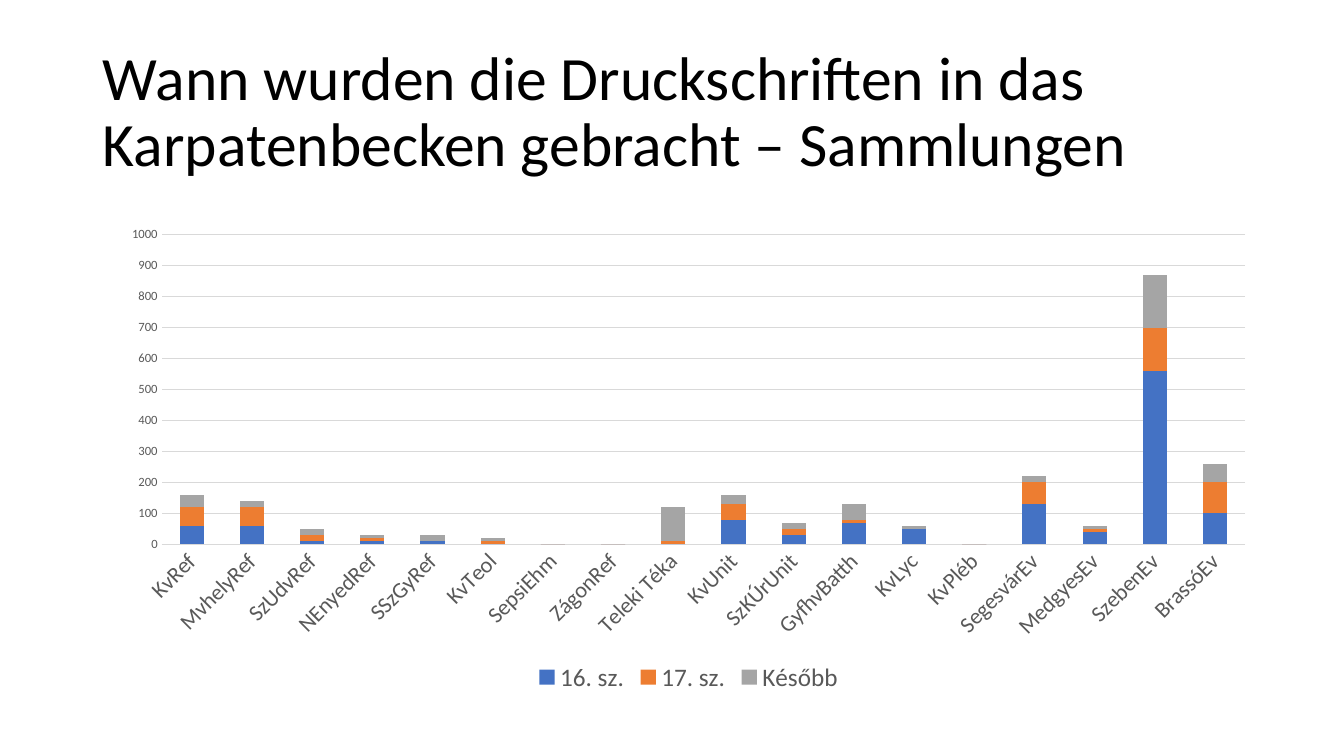
"""Build a slide with a stacked column chart of prints by collection."""
from pptx import Presentation
from pptx.chart.data import CategoryChartData
from pptx.dml.color import RGBColor
from pptx.enum.chart import XL_CHART_TYPE, XL_LEGEND_POSITION, XL_TICK_MARK
from pptx.enum.text import MSO_ANCHOR, MSO_AUTO_SIZE, PP_ALIGN
from pptx.util import Inches, Pt

STACKED = XL_CHART_TYPE.COLUMN_STACKED
BOTTOM = XL_LEGEND_POSITION.BOTTOM
NO_TICK = XL_TICK_MARK.NONE
MIDDLE = MSO_ANCHOR.MIDDLE
NO_AUTOFIT = MSO_AUTO_SIZE.NONE
LEFT = PP_ALIGN.LEFT

FONT = "Calibri"
BLACK = RGBColor(0x00, 0x00, 0x00)
GREY_TEXT = RGBColor(0x59, 0x59, 0x59)
GREY_LINE = RGBColor(0xD9, 0xD9, 0xD9)
BLUE = RGBColor(0x44, 0x72, 0xC4)
ORANGE = RGBColor(0xED, 0x7D, 0x31)
GREY = RGBColor(0xA5, 0xA5, 0xA5)

TITLE = "Wann wurden die Druckschriften in das Karpatenbecken gebracht – Sammlungen"
COLLECTIONS = [
    "KvRef", "MvhelyRef", "SzUdvRef", "NEnyedRef", "SSzGyRef", "KvTeol",
    "SepsiEhm", "ZágonRef", "Teleki Téka", "KvUnit", "SzKÚrUnit", "GyfhvBatth",
    "KvLyc", "KvPléb", "SegesvárEv", "MedgyesEv", "SzebenEv", "BrassóEv",
]
PERIODS = [
    ("16. sz.", BLUE,
     [60, 60, 10, 10, 10, 0, 0, 0, 0, 80, 30, 70, 50, 0, 130, 40, 560, 100]),
    ("17. sz.", ORANGE,
     [60, 60, 20, 10, 0, 10, 0, 0, 10, 50, 20, 10, 0, 0, 70, 10, 140, 100]),
    ("Később", GREY,
     [40, 20, 20, 10, 20, 10, 0, 0, 110, 30, 20, 50, 10, 0, 20, 10, 170, 60]),
]


def style_font(font, size, color):
    """Set typeface, size and colour of a font."""
    font.name = FONT
    font.size = Pt(size)
    font.bold = False
    font.color.rgb = color


def style_line(line):
    """Give a line the thin light grey look."""
    line.color.rgb = GREY_LINE
    line.width = Pt(0.75)


def fill_title(page):
    """Place and format the title."""
    title = page.shapes.title
    title.left, title.top = Inches(0.92), Inches(0.4)
    title.width, title.height = Inches(11.5), Inches(1.45)
    frame = title.text_frame
    frame.text = TITLE
    frame.word_wrap = True
    frame.auto_size = NO_AUTOFIT
    frame.vertical_anchor = MIDDLE
    para = frame.paragraphs[0]
    para.alignment = LEFT
    para.line_spacing = 0.9
    style_font(para.runs[0].font, 44, BLACK)


def style_axes(chart):
    """Format the collection axis and the count axis."""
    collections, counts = chart.category_axis, chart.value_axis
    for axis, size in ((collections, 16), (counts, 9)):
        axis.major_tick_mark = NO_TICK
        axis.minor_tick_mark = NO_TICK
        style_font(axis.tick_labels.font, size, GREY_TEXT)
    style_line(collections.format.line)
    collections._element.txPr.bodyPr.set("rot", "-2700000")
    counts.minimum_scale, counts.maximum_scale = 0, 1000
    counts.major_unit = 100
    counts.format.line.fill.background()
    counts.has_major_gridlines = True
    style_line(counts.major_gridlines.format.line)


def add_period_chart(page):
    """Add the stacked columns of periods by collection."""
    data = CategoryChartData()
    data.categories = COLLECTIONS
    for name, _, values in PERIODS:
        data.add_series(name, values)
    chart = page.shapes.add_chart(
        STACKED, Inches(1.08), Inches(2.16), Inches(11.5), Inches(4.76), data
    ).chart
    style_font(chart.font, 10, BLACK)
    chart.has_title = False
    style_axes(chart)
    chart.has_legend = True
    chart.legend.position = BOTTOM
    chart.legend.include_in_layout = False
    style_font(chart.legend.font, 18, GREY_TEXT)
    plot = chart.plots[0]
    plot.gap_width, plot.overlap = 150, 100
    plot.vary_by_categories = False
    for series, (_, color, _) in zip(plot.series, PERIODS):
        series.format.fill.solid()
        series.format.fill.fore_color.rgb = color


def main():
    """Build and save the deck."""
    deck = Presentation()
    deck.slide_width, deck.slide_height = Inches(13.33), Inches(7.5)
    page = deck.slides.add_slide(deck.slide_layouts[5])
    fill_title(page)
    add_period_chart(page)
    deck.save("out.pptx")


if __name__ == "__main__":
    main()
